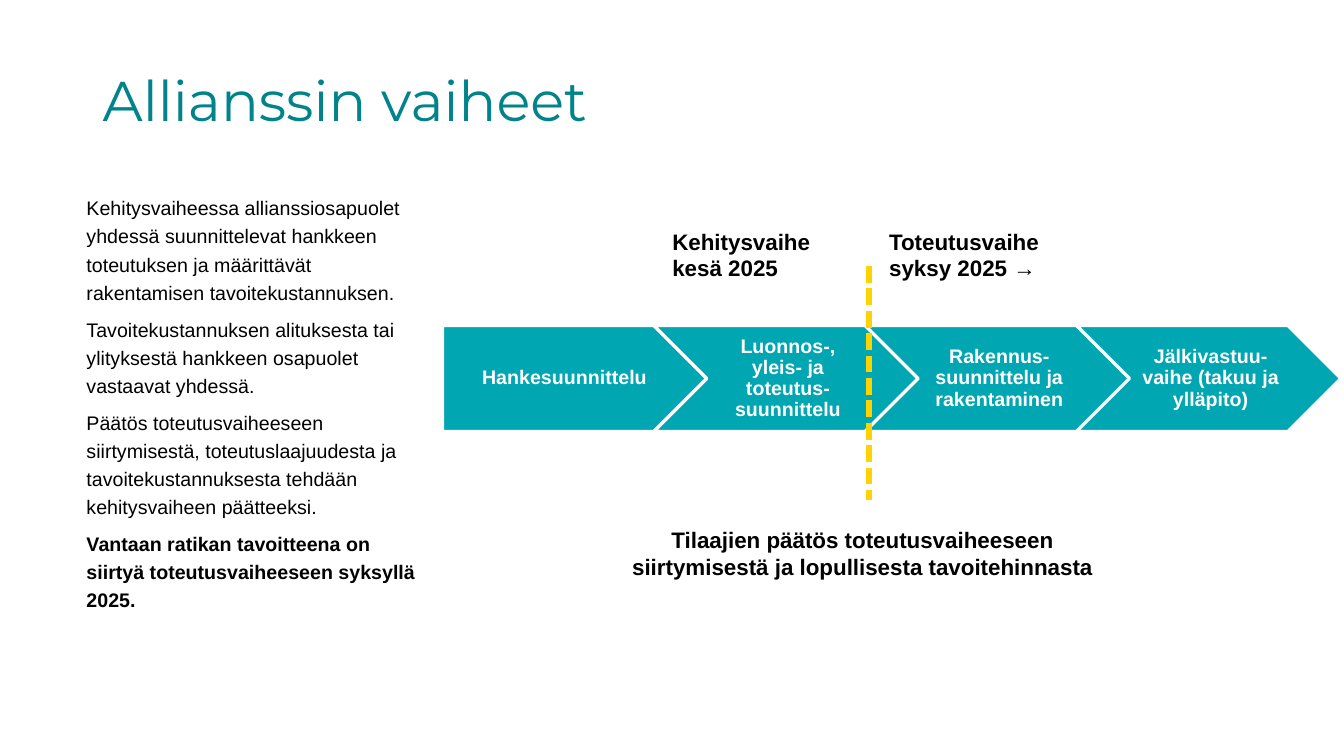
import pptx
import pptx.dml.color
import pptx.enum.dml
import pptx.enum.shapes
import pptx.enum.text
import pptx.oxml
import pptx.util

Inches = pptx.util.Inches
Pt = pptx.util.Pt
PRESET = pptx.enum.shapes.MSO_SHAPE
ALIGN = pptx.enum.text.PP_ALIGN
ANCHOR = pptx.enum.text.MSO_ANCHOR

PHASES = [
    "Hankesuunnittelu",
    "Luonnos-, yleis- ja toteutus-suunnittelu",
    "Rakennus-suunnittelu ja rakentaminen",
    "Jälkivastuu-vaihe (takuu ja ylläpito)",
]
BODY = [
    "Kehitysvaiheessa allianssiosapuolet yhdessä suunnittelevat hankkeen "
    "toteutuksen ja määrittävät rakentamisen tavoitekustannuksen.",
    "Tavoitekustannuksen alituksesta tai ylityksestä hankkeen osapuolet "
    "vastaavat yhdessä.",
    "Päätös toteutusvaiheeseen siirtymisestä, toteutuslaajuudesta ja "
    "tavoitekustannuksesta tehdään kehitysvaiheen päätteeksi.",
    "Vantaan ratikan tavoitteena on siirtyä toteutusvaiheeseen syksyllä 2025.",
]
DECISION = ("Tilaajien päätös toteutusvaiheeseen siirtymisestä "
            "ja lopullisesta tavoitehinnasta")
PHASE_LEFT, PHASE_TOP, PHASE_WIDTH, PHASE_HEIGHT = 4.39, 3.23, 2.62, 1.05
PHASE_STEP = PHASE_WIDTH * 0.8


def color(value):
    """Turn a hex string into a colour."""
    return pptx.dml.color.RGBColor.from_string(value)


def write(frame, lines, size, hue="000000", bold=False, name="Arial",
          align=ALIGN.LEFT, spacing=1.0, after=0):
    """Fill a text frame with one paragraph per line and return them."""
    frame.word_wrap = True
    frame.text = "\n".join(lines)
    for paragraph in frame.paragraphs:
        paragraph.alignment = align
        paragraph.line_spacing = spacing
        paragraph.space_after = Pt(after)
        paragraph.font.name = name
        paragraph.font.size = Pt(size)
        paragraph.font.bold = bold
        paragraph.font.color.rgb = color(hue)
    return frame.paragraphs


def add_text(slide, left, top, width, height, lines, size, **style):
    """Add a text box and return its paragraphs."""
    box = slide.shapes.add_textbox(
        Inches(left), Inches(top), Inches(width), Inches(height))
    return write(box.text_frame, lines, size, **style)


def add_phase(slide, index, label):
    """Add one arrow of the phase chain with its label."""
    shape = slide.shapes.add_shape(
        PRESET.CHEVRON if index else PRESET.PENTAGON,
        Inches(PHASE_LEFT + index * PHASE_STEP), Inches(PHASE_TOP),
        Inches(PHASE_WIDTH), Inches(PHASE_HEIGHT))
    shape.shadow.inherit = False
    shape.fill.solid()
    shape.fill.fore_color.rgb = color("00A6B1")
    shape.line.color.rgb = color("FFFEFE")
    shape.line.width = Pt(2.25)
    frame = shape.text_frame
    frame.margin_left = Inches(0.06 if index else 0.08)
    frame.margin_right = Inches(0.02)
    frame.margin_top = frame.margin_bottom = Inches(0.04)
    frame.vertical_anchor = ANCHOR.MIDDLE
    write(frame, [label], 14, hue="FFFFFF", bold=True,
          align=ALIGN.CENTER, spacing=0.9)


def add_divider(slide, left, top, bottom):
    """Add the dashed vertical line at the decision point."""
    line = slide.shapes.add_connector(
        pptx.enum.shapes.MSO_CONNECTOR.STRAIGHT,
        Inches(left), Inches(top), Inches(left), Inches(bottom))
    line.line.color.rgb = color("FFD300")
    line.line.width = Pt(4)
    line.line.dash_style = pptx.enum.dml.MSO_LINE.SQUARE_DOT
    properties = line._element.spPr
    properties.append(pptx.oxml.parse_xml(
        '<a:effectLst xmlns:a='
        '"http://schemas.openxmlformats.org/drawingml/2006/main"/>'))


def main():
    """Build the slide and save it."""
    presentation = pptx.Presentation()
    presentation.slide_width = Inches(13.33)
    presentation.slide_height = Inches(7.5)
    slide = presentation.slides.add_slide(presentation.slide_layouts[6])
    add_text(slide, 0.92, 0.68, 11.51, 1.17, ["Allianssin vaiheet"], 40,
             hue="00838A", name="Montserrat", spacing=0.9)
    body = add_text(slide, 0.76, 1.85, 3.47, 4.29, BODY, 14,
                    spacing=1.2, after=6)
    body[-1].font.bold = True
    for index, label in enumerate(PHASES):
        add_phase(slide, index, label)
    add_text(slide, 6.57, 2.21, 1.83, 0.64,
             ["Kehitysvaihe", "kesä 2025"], 16, bold=True)
    add_text(slide, 8.72, 2.21, 2.07, 0.64,
             ["Toteutusvaihe", "syksy 2025 →"], 16, bold=True)
    add_text(slide, 5.94, 5.17, 5.23, 0.64, [DECISION], 16, bold=True,
             align=ALIGN.CENTER)
    add_divider(slide, 8.62, 2.64, 4.96)
    presentation.save("out.pptx")


if __name__ == "__main__":
    main()
